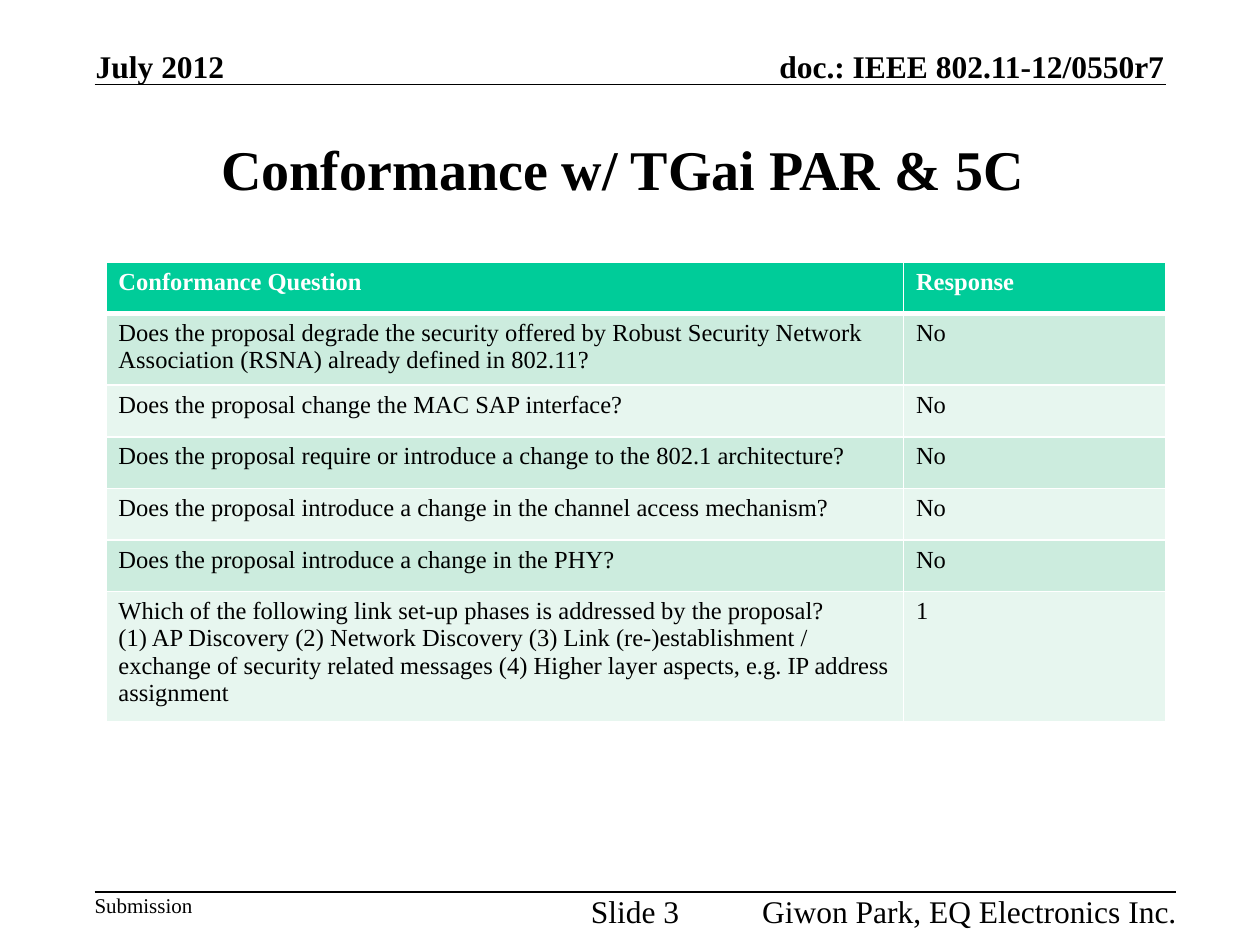
"""Build the conformance slide with its header, footer and question table."""
from lxml import etree
from pptx import Presentation
from pptx.dml.color import RGBColor
from pptx.enum import text as t
from pptx.oxml import ns
from pptx.util import Inches, Pt

BLACK = RGBColor(0, 0, 0)
WHITE = RGBColor(255, 255, 255)
GREEN = RGBColor(0x00, 0xCC, 0x99)
BANDS = RGBColor(0xCC, 0xEC, 0xDE), RGBColor(0xE7, 0xF6, 0xEF)
FONT = "Times New Roman"
LEFT, MID, RIGHT = t.PP_ALIGN.LEFT, t.PP_ALIGN.CENTER, t.PP_ALIGN.RIGHT
TOP, LOW = t.MSO_ANCHOR.TOP, t.MSO_ANCHOR.BOTTOM

LABELS = [
    ("doc.: IEEE 802.11-12/0550r7", (5.65, 0.37, 3.59, 0.3), 18, True, RIGHT, LOW),
    ("July 2012", (0.76, 0.37, 1.1, 0.3), 18, True, LEFT, LOW),
    ("Submission", (0.75, 7.08, 0.85, 0.2), 12, False, LEFT, TOP),
    ("Slide 3", (4.64, 7.08, 0.8, 0.3), 18, False, MID, TOP),
    ("Giwon Park, EQ Electronics Inc.", (5.84, 7.08, 3.5, 0.3), 18, False, RIGHT, TOP),
    ("Conformance w/ TGai PAR & 5C ", (0.75, 0.75, 8.5, 1.17), 32, True, MID,
     t.MSO_ANCHOR.MIDDLE),
]
RULES = [(0.67, 9.25), (7.08, 9.33)]
ROWS = [
    (["Conformance Question"], "Response"),
    (["Does the proposal degrade the security offered by Robust Security Network "
      "Association (RSNA) already defined in 802.11?"], "No"),
    (["Does the proposal change the MAC SAP interface?"], "No"),
    (["Does the proposal require or introduce a change to the 802.1 architecture?"], "No"),
    (["Does the proposal introduce a change in the channel access mechanism?"], "No"),
    (["Does the proposal introduce a change in the PHY?"], "No"),
    (["Which of the following link set-up phases is addressed by the proposal?",
      "(1) AP Discovery (2) Network Discovery (3) Link (re-)establishment / "
      "exchange of security related messages (4) Higher layer aspects, "
      "e.g. IP address assignment"], "1"),
]
COLS = 6.33, 2.08
ROW = 0.41
TALL = 3.63


def write(frame, lines, size, bold=False, color=BLACK, align=LEFT):
    for i, line in enumerate(lines):
        para = frame.add_paragraph() if i else frame.paragraphs[0]
        para.alignment = align
        run = para.add_run()
        run.text = line
        font = run.font
        font.name, font.size, font.bold = FONT, Pt(size), bold
        font.color.rgb = color


def box(slide, line, area, size, bold, align, anchor):
    frame = slide.shapes.add_textbox(*map(Inches, area)).text_frame
    frame.word_wrap = True
    frame.vertical_anchor = anchor
    frame.margin_left = frame.margin_right = 0
    frame.margin_top = frame.margin_bottom = 0
    write(frame, [line], size, bold, align=align)


def rule(slide, y, end):
    line = slide.shapes.add_connector(1, Inches(0.75), Inches(y), Inches(end), Inches(y))
    line.line.color.rgb = BLACK
    line.line.width = Pt(1)
    etree.SubElement(line._element.spPr, ns.qn("a:effectLst"))


def border(cell, sides):
    props = cell._tc.get_or_add_tcPr()
    for i, (side, width) in enumerate(sides.items()):
        edge = etree.Element(ns.qn(f"a:ln{side}"), w=str(Pt(width)))
        fill = etree.SubElement(edge, ns.qn("a:solidFill"))
        etree.SubElement(fill, ns.qn("a:srgbClr"), val=str(WHITE))
        props.insert(i, edge)


def grid(slide):
    area = map(Inches, (0.84, 2.08, sum(COLS), TALL))
    holder = slide.shapes.add_table(len(ROWS), len(COLS), *area)
    table = holder.table
    for col, width in zip(table.columns, COLS):
        col.width = Inches(width)
    for r, (query, reply) in enumerate(ROWS):
        table.rows[r].height = Inches(ROW)
        head = r == 0
        for c, lines in enumerate((query, [reply])):
            cell = table.cell(r, c)
            cell.fill.solid()
            cell.fill.fore_color.rgb = GREEN if head else BANDS[(r - 1) % 2]
            write(cell.text_frame, lines, 14, head, WHITE if head else BLACK)
            border(cell, {"L": 1, "R": 1, "T": 3 if r == 1 else 1, "B": 3 if head else 1})
    holder.height = Inches(TALL)


def main():
    deck = Presentation()
    deck.slide_width, deck.slide_height = Inches(10), Inches(7.5)
    slide = deck.slides.add_slide(deck.slide_layouts[6])
    for y, end in RULES:
        rule(slide, y, end)
    for label in LABELS:
        box(slide, *label)
    grid(slide)
    deck.save("out.pptx")


if __name__ == "__main__":
    main()
